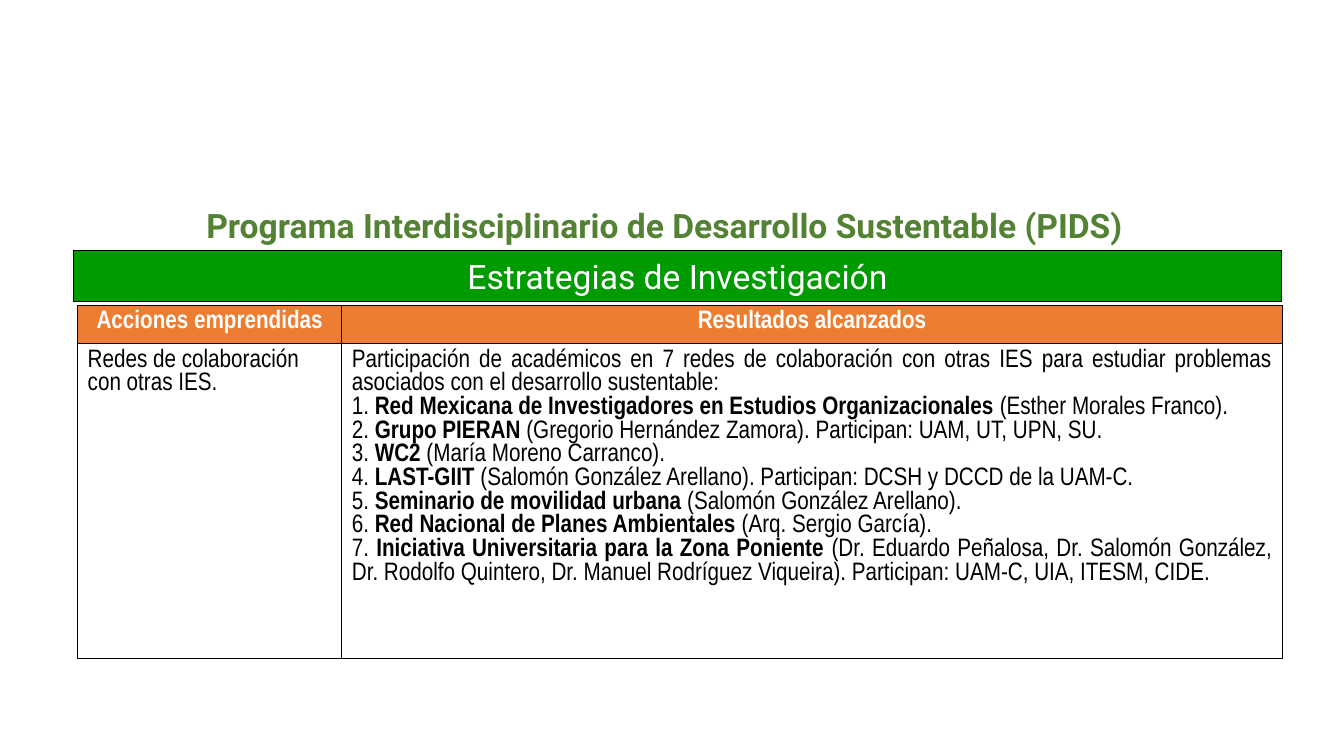
from dataclasses import dataclass
from typing import Optional

from lxml.etree import SubElement
from pptx import Presentation
from pptx.dml.color import RGBColor as Rgb
from pptx.enum.shapes import MSO_SHAPE as Shape
from pptx.enum.text import MSO_ANCHOR as Anchor, MSO_AUTO_SIZE as AutoSize, PP_ALIGN as Align
from pptx.oxml import parse_xml
from pptx.oxml.ns import nsdecls, qn
from pptx.util import Inches, Pt


@dataclass(frozen=True)
class Theme:
    """Colours, fonts and type sizes of the slide."""
    white: str = "FFFFFF"
    black: str = "000000"
    banner: str = "009B00"
    title: str = "548235"
    header: str = "ED7D31"
    heading_font: str = "Roboto"
    table_font: str = "Arial Narrow"
    heading_size: int = 24
    table_size: int = 18


@dataclass(frozen=True)
class Network:
    """A collaboration network and the people behind it."""
    name: str
    people: str


@dataclass(frozen=True)
class Heading:
    """A centred line of text above the table."""
    text: str
    left: float
    top: float
    width: float
    color: str
    bold: bool = False
    fill: Optional[str] = None


THEME = Theme()
HEADING_HEIGHT = 0.5
COLUMN_WIDTHS = (2.62, 9.33)
ROW_HEIGHTS = (0.38, 3.12)
HEADERS = ("Acciones emprendidas", "Resultados alcanzados")
ACTION = "Redes de colaboración con otras IES."
INTRO = ("Participación de académicos en 7 redes de colaboración con otras IES "
         "para estudiar problemas asociados con el desarrollo sustentable:")
NETWORKS = (
    Network("Red Mexicana de Investigadores en Estudios Organizacionales",
            "(Esther Morales Franco)."),
    Network("Grupo PIERAN", "(Gregorio Hernández Zamora). Participan: UAM, UT, UPN, SU."),
    Network("WC2", "(María Moreno Carranco)."),
    Network("LAST-GIIT",
            "(Salomón González Arellano). Participan: DCSH y DCCD de la UAM-C."),
    Network("Seminario de movilidad urbana", "(Salomón González Arellano)."),
    Network("Red Nacional de Planes Ambientales", "(Arq. Sergio García)."),
    Network("Iniciativa Universitaria para la Zona Poniente",
            "(Dr. Eduardo Peñalosa, Dr. Salomón González, Dr. Rodolfo Quintero, "
            "Dr. Manuel Rodríguez Viqueira). Participan: UAM-C, UIA, ITESM, CIDE."),
)
BANNER = Heading("Estrategias de Investigación", 0.73, 2.49, 11.98,
                 THEME.white, fill=THEME.banner)
TITLE = Heading("Programa Interdisciplinario de Desarrollo Sustentable (PIDS)",
                1.04, 1.98, 11.1, THEME.title, bold=True)


def style_span(span, font: str, size: int, color: str, bold: bool = False) -> None:
    """Set the font of one run."""
    span.font.name = font
    span.font.size = Pt(size)
    span.font.bold = bold
    span.font.color.rgb = Rgb.from_string(color)


def outline_span(span, color: str) -> None:
    """Draw a one-point line around the letters of a run."""
    line = parse_xml(f'<a:ln {nsdecls("a")} w="{Pt(1)}"><a:solidFill>'
                     f'<a:srgbClr val="{color}"/></a:solidFill></a:ln>')
    span.font._element.insert(0, line)


def add_heading(page, heading: Heading):
    """Add a heading, on a filled rectangle if it has a fill, and return its run."""
    place = [Inches(n) for n in (heading.left, heading.top, heading.width, HEADING_HEIGHT)]
    if heading.fill:
        box = page.shapes.add_shape(Shape.RECTANGLE, *place)
        box.shadow.inherit = False
        box.fill.solid()
        box.fill.fore_color.rgb = Rgb.from_string(heading.fill)
        box.line.color.rgb = Rgb.from_string(THEME.black)
        box.line.width = Pt(0.75)
    else:
        box = page.shapes.add_textbox(*place)
    frame = box.text_frame
    frame.text = heading.text
    frame.word_wrap = True
    frame.auto_size = AutoSize.SHAPE_TO_FIT_TEXT
    frame.vertical_anchor = Anchor.TOP
    para = frame.paragraphs[0]
    para.alignment = Align.CENTER
    span = para.runs[0]
    style_span(span, THEME.heading_font, THEME.heading_size, heading.color, heading.bold)
    return span


def style_cell(cell, fill: Optional[str]) -> None:
    """Give a cell black borders and a fill."""
    properties = cell._tc.get_or_add_tcPr()
    for side in ("lnL", "lnR", "lnT", "lnB"):
        line = SubElement(properties, qn(f"a:{side}"), w=str(Pt(1)))
        color = SubElement(line, qn("a:solidFill"))
        SubElement(color, qn("a:srgbClr"), val=THEME.black)
    if fill:
        cell.fill.solid()
        cell.fill.fore_color.rgb = Rgb.from_string(fill)
    else:
        cell.fill.background()


def fill_cell(cell, text: str, align: Align, header: bool = False) -> None:
    """Write the first paragraph of a cell and style it."""
    style_cell(cell, THEME.header if header else None)
    cell.text_frame.text = text
    para = cell.text_frame.paragraphs[0]
    para.alignment = align
    color = THEME.white if header else THEME.black
    style_span(para.runs[0], THEME.table_font, THEME.table_size, color, header)


def add_network(cell, network: Network) -> None:
    """Add one numbered network to a cell."""
    para = cell.text_frame.add_paragraph()
    para.alignment = Align.JUSTIFY
    properties = para._p.get_or_add_pPr()
    properties.set("marL", "0")
    properties.set("indent", "0")
    SubElement(properties, qn("a:buFont"), typeface="+mj-lt")
    SubElement(properties, qn("a:buAutoNum"), type="arabicPeriod")
    for text, bold in ((" ", False), (f"{network.name} ", True), (network.people, False)):
        span = para.add_run()
        span.text = text
        style_span(span, THEME.table_font, THEME.table_size, THEME.black, bold)


def add_results_table(page) -> None:
    """Add the table of actions and results."""
    table = page.shapes.add_table(
        len(ROW_HEIGHTS), len(COLUMN_WIDTHS), Inches(0.77), Inches(3.03),
        Inches(sum(COLUMN_WIDTHS)), Inches(sum(ROW_HEIGHTS))).table
    table.horz_banding = False
    for column, width in zip(table.columns, COLUMN_WIDTHS):
        column.width = Inches(width)
    for row, height in zip(table.rows, ROW_HEIGHTS):
        row.height = Inches(height)
    for index, header in enumerate(HEADERS):
        fill_cell(table.cell(0, index), header, Align.CENTER, header=True)
    fill_cell(table.cell(1, 0), ACTION, Align.LEFT)
    results = table.cell(1, 1)
    fill_cell(results, INTRO, Align.JUSTIFY)
    for network in NETWORKS:
        add_network(results, network)


def main() -> None:
    """Build the slide and save it."""
    deck = Presentation()
    deck.slide_width, deck.slide_height = Inches(13.33), Inches(7.5)
    page = deck.slides.add_slide(deck.slide_layouts[6])
    add_results_table(page)
    add_heading(page, BANNER)
    outline_span(add_heading(page, TITLE), THEME.title)
    deck.save("out.pptx")


if __name__ == "__main__":
    main()
